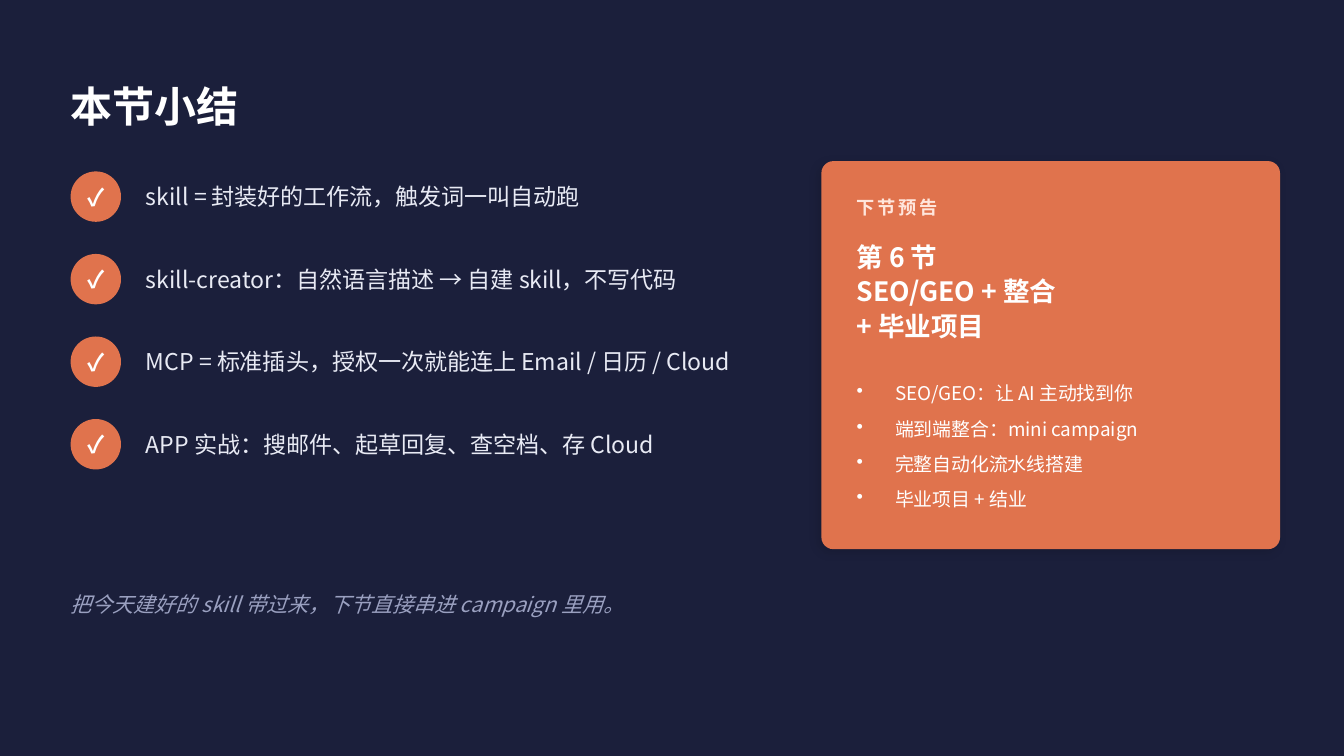
import pptx
import pptx.dml.color
import pptx.enum.shapes
import pptx.enum.text
import pptx.oxml.ns
import pptx.oxml.xmlchemy
import pptx.util
from lxml import etree

Cm = pptx.util.Cm
Pt = pptx.util.Pt
qn = pptx.oxml.ns.qn
SHAPES = pptx.enum.shapes.MSO_SHAPE
ALIGN = pptx.enum.text.PP_ALIGN

FONT = "Noto Sans CJK SC"
NAVY, ORANGE, WHITE = "1B1F3B", "E0734D", "FFFFFF"
PALE, PEACH, MUTED = "E8EAF4", "FFE6DC", "9AA0C0"


def color(hex_code):
    return pptx.dml.color.RGBColor.from_string(hex_code)


class SummarySlide:
    def __init__(self, deck):
        self.slide = deck.slides.add_slide(deck.slide_layouts[6])
        self.slide.background.fill.solid()
        self.slide.background.fill.fore_color.rgb = color(NAVY)

    def panel(self, preset, left, top, width, height):
        panel = self.slide.shapes.add_shape(
            preset, Cm(left), Cm(top), Cm(width), Cm(height))
        panel.shadow.inherit = False
        panel.fill.solid()
        panel.fill.fore_color.rgb = color(ORANGE)
        panel.line.fill.background()
        return panel

    def card(self, left, top, width, height):
        """Rounded panel with a soft shadow."""
        card = self.panel(SHAPES.ROUNDED_RECTANGLE, left, top, width, height)
        card.adjustments[0] = 0.031
        effects = card._element.spPr.find(qn("a:effectLst"))
        shadow = etree.SubElement(
            effects, qn("a:outerShdw"), blurRad=str(Pt(7)), dist=str(Pt(3)),
            dir=str(135 * 60000), algn="bl", rotWithShape="0")
        tint = etree.SubElement(shadow, qn("a:srgbClr"), val="000000")
        etree.SubElement(tint, qn("a:alpha"), val="12000")

    def text(self, words, left, top, width, height, size, hex_code, bold=False,
             italic=False, align=ALIGN.LEFT, line_spacing=None, tracking=None):
        box = self.slide.shapes.add_textbox(Cm(left), Cm(top), Cm(width), Cm(height))
        frame = box.text_frame
        frame.word_wrap = True
        frame.vertical_anchor = pptx.enum.text.MSO_ANCHOR.MIDDLE
        frame.margin_left = frame.margin_right = 0
        frame.margin_top = frame.margin_bottom = 0
        frame.text = words
        for paragraph in frame.paragraphs:
            paragraph.alignment = align
            paragraph.line_spacing = line_spacing
            for run in paragraph.runs:
                run.font.name = FONT
                run.font.size = Pt(size)
                run.font.bold = bold
                run.font.italic = italic
                run.font.color.rgb = color(hex_code)
                properties = run._r.get_or_add_rPr()
                etree.SubElement(properties, qn("a:ea"), typeface=FONT)
                if tracking:
                    properties.set("spc", str(tracking * 100))
        return frame

    def bullets(self, items, left, top, width, height, size, hex_code):
        frame = self.text("\n".join(items), left, top, width, height, size, hex_code)
        for paragraph in frame.paragraphs:
            paragraph.space_after = Pt(9)
            properties = paragraph._p.get_or_add_pPr()
            properties.set("marL", str(Cm(0.97)))
            properties.set("indent", str(-Cm(0.97)))
            etree.SubElement(properties, qn("a:buChar"), char="•")

    def takeaway(self, words, top):
        """One checked line of the summary."""
        badge = (MARGIN, top, BADGE, BADGE)
        self.panel(SHAPES.OVAL, *badge)
        self.text("✓", *badge, 17, WHITE, bold=True, align=ALIGN.CENTER)
        self.text(words, 3.68, top, 17.4, BADGE, 16.5, PALE)


MARGIN = 1.78
BADGE = 1.27
FIRST_ROW, ROW_STEP = 4.32, 2.08
CARD_TEXT, CARD_TEXT_WIDTH = 21.59, 10.03

TAKEAWAYS = [
    "skill = 封装好的工作流，触发词一叫自动跑",
    "skill-creator：自然语言描述 → 自建 skill，不写代码",
    "MCP = 标准插头，授权一次就能连上 Email / 日历 / Cloud",
    "APP 实战：搜邮件、起草回复、查空档、存 Cloud",
]
NEXT_TOPICS = [
    "SEO/GEO：让 AI 主动找到你",
    "端到端整合：mini campaign",
    "完整自动化流水线搭建",
    "毕业项目 + 结业",
]


def main():
    deck = pptx.Presentation()
    deck.slide_width, deck.slide_height = Cm(33.87), Cm(19.05)
    summary = SummarySlide(deck)

    summary.text("本节小结", MARGIN, 1.78, 27.94, 1.78, 30, WHITE, bold=True)
    for row, words in enumerate(TAKEAWAYS):
        summary.takeaway(words, FIRST_ROW + row * ROW_STEP)

    summary.card(20.7, 4.06, 11.56, 9.78)
    summary.text("下节预告", CARD_TEXT, 4.7, 10.16, 1.02, 13, PEACH,
                 bold=True, tracking=2)
    summary.text("第 6 节\nSEO/GEO + 整合\n+ 毕业项目", CARD_TEXT, 5.84,
                 CARD_TEXT_WIDTH, 2.92, 19, WHITE, bold=True, line_spacing=1.08)
    summary.bullets(NEXT_TOPICS, CARD_TEXT, 9.02, CARD_TEXT_WIDTH, 4.45, 13.5, WHITE)

    summary.text("把今天建好的 skill 带过来，下节直接串进 campaign 里用。",
                 MARGIN, 14.6, 18.29, 1.27, 15, MUTED, italic=True)
    deck.save("out.pptx")


if __name__ == "__main__":
    main()
